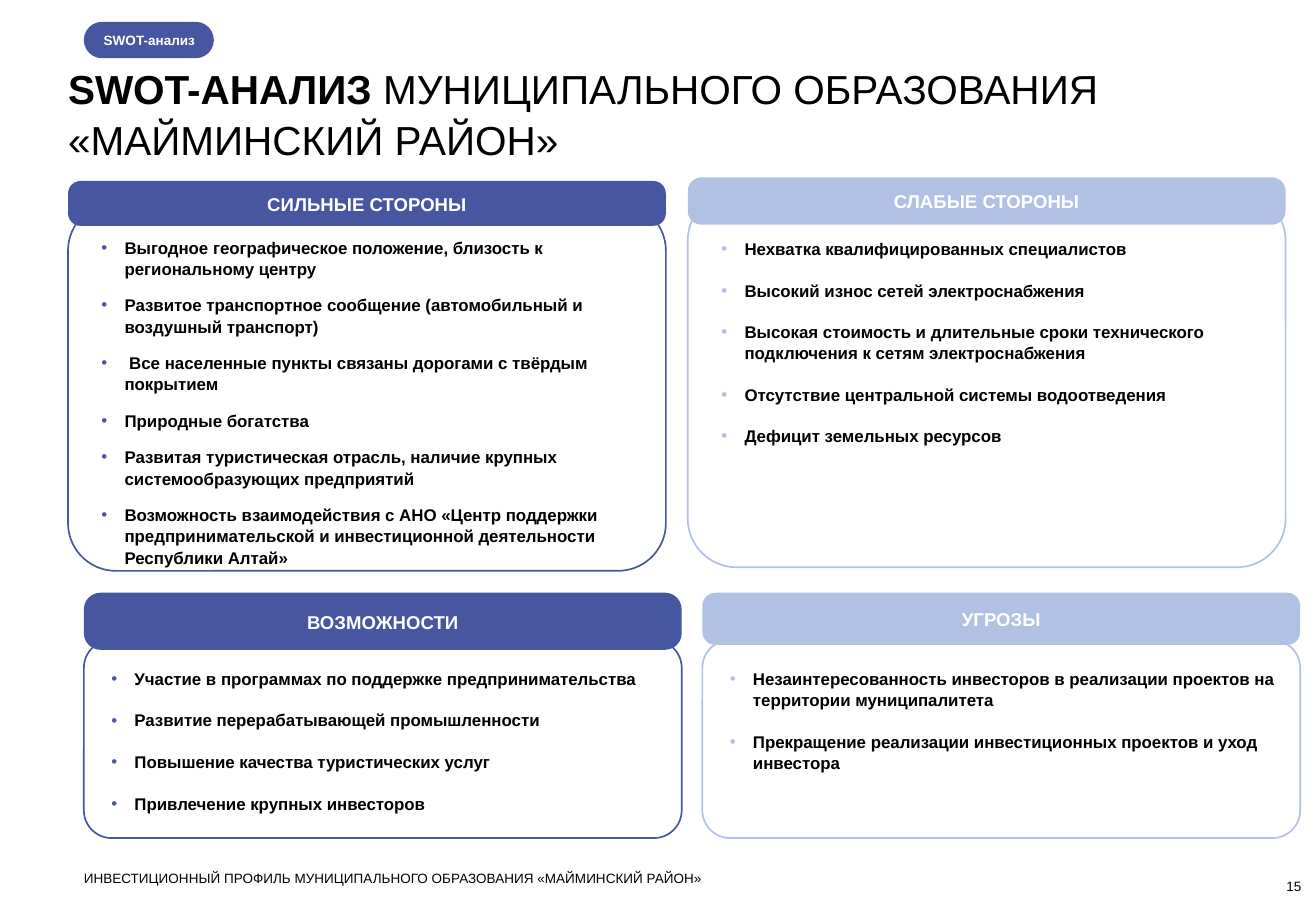
from lxml import etree
from pptx import Presentation
from pptx.dml.color import RGBColor
from pptx.enum.shapes import MSO_SHAPE
from pptx.enum.text import MSO_ANCHOR, MSO_AUTO_SIZE, PP_ALIGN
from pptx.oxml.ns import qn
from pptx.util import Pt

ROUNDED = MSO_SHAPE.ROUNDED_RECTANGLE
TOP, MIDDLE, BOTTOM = MSO_ANCHOR.TOP, MSO_ANCHOR.MIDDLE, MSO_ANCHOR.BOTTOM
LEFT, CENTER, RIGHT = PP_ALIGN.LEFT, PP_ALIGN.CENTER, PP_ALIGN.RIGHT
NO_AUTOFIT = MSO_AUTO_SIZE.NONE

EMU_PER_PX = 9144  # 100 px to the inch
COLORS = {"strong": "4756A0", "light": "B1C1E4", "text": "000000", "white": "FFFFFF"}
FONT = "Arial"
LINE_SPACING = 1.05
INDENT = 19
CARD_WIDTH = 492

# Each quadrant: heading, colour, left, heading (top, height, radius),
# card (top, height, radius), top inset, right inset, gap in points, items
QUADRANTS = [
    ("СИЛЬНЫЕ СТОРОНЫ", "strong", 56, (149, 37, 0.28), (167, 303, 0.13), 16, 16, 9, [
        "Выгодное географическое положение, близость к региональному центру",
        "Развитое транспортное сообщение (автомобильный и воздушный транспорт)",
        " Все населенные пункты связаны дорогами с твёрдым покрытием",
        "Природные богатства",
        "Развитая туристическая отрасль, наличие крупных системообразующих предприятий",
        "Возможность взаимодействия с АНО «Центр поддержки предпринимательской "
        "и инвестиционной деятельности Республики Алтай»",
    ]),
    ("СЛАБЫЕ СТОРОНЫ", "light", 566, (146, 39, 0.29), (158, 309, 0.13), 26, 10, 12, [
        "Нехватка квалифицированных специалистов",
        "Высокий износ сетей электроснабжения",
        "Высокая стоимость и длительные сроки технического подключения "
        "к сетям электроснабжения",
        "Отсутствие центральной системы водоотведения",
        "Дефицит земельных ресурсов",
    ]),
    ("ВОЗМОЖНОСТИ", "strong", 69, (488, 47, 0.29), (527, 163, 0.14), 16, 16, 12, [
        "Участие в программах по поддержке предпринимательства",
        "Развитие перерабатывающей промышленности",
        "Повышение качества туристических услуг",
        "Привлечение крупных инвесторов",
    ]),
    ("УГРОЗЫ", "light", 578, (488, 43, 0.25), (527, 163, 0.14), 16, 10, 12, [
        "Незаинтересованность инвесторов в реализации проектов на "
        "территории муниципалитета",
        "Прекращение реализации инвестиционных проектов и уход инвестора",
    ]),
]


def px(*lengths):
    return [length * EMU_PER_PX for length in lengths]


def rgb(name):
    return RGBColor.from_string(COLORS[name])


def write(paragraph, text, size=10, bold=False, color="text", align=LEFT):
    paragraph.alignment = align
    paragraph.line_spacing = LINE_SPACING
    run = paragraph.add_run()
    run.text = text
    run.font.name = FONT
    run.font.size = Pt(size)
    run.font.bold = bold
    run.font.color.rgb = rgb(color)


def prepare_frame(frame, insets=(0, 0, 0, 0), anchor=TOP):
    frame.word_wrap = True
    frame.auto_size = NO_AUTOFIT
    frame.vertical_anchor = anchor
    (frame.margin_left, frame.margin_top,
     frame.margin_right, frame.margin_bottom) = px(*insets)
    return frame


def add_rounded(slide, box, radius, fill=None, line=None):
    rounded = slide.shapes.add_shape(ROUNDED, *px(*box))
    rounded.shadow.inherit = False
    rounded.adjustments[0] = radius
    if fill:
        rounded.fill.solid()
        rounded.fill.fore_color.rgb = rgb(fill)
    else:
        rounded.fill.background()
    if line:
        rounded.line.color.rgb = rgb(line)
        rounded.line.width = Pt(1)
    else:
        rounded.line.fill.background()
    return rounded


def add_bullet(paragraph, color):
    properties = paragraph._p.get_or_add_pPr()
    indent, = px(INDENT)
    properties.set("marL", str(indent))
    properties.set("indent", str(-indent))
    bullet_color = etree.SubElement(properties, qn("a:buClr"))
    etree.SubElement(bullet_color, qn("a:srgbClr"), val=COLORS[color])
    etree.SubElement(properties, qn("a:buFont"), typeface=FONT)
    etree.SubElement(properties, qn("a:buChar"), char="•")


def add_quadrant(slide, heading, color, left, heading_band, card_band,
                 top_inset, right_inset, gap, items):
    """Outlined card with a bulleted list, under a filled heading bar."""
    top, height, radius = card_band
    card = add_rounded(slide, (left, top, CARD_WIDTH, height), radius, line=color)
    frame = prepare_frame(card.text_frame, (16, top_inset, right_inset, 5))
    for number, item in enumerate(items):
        paragraph = frame.add_paragraph() if number else frame.paragraphs[0]
        add_bullet(paragraph, color)
        if number:
            paragraph.space_before = Pt(gap)
        write(paragraph, item, bold=True)

    top, height, radius = heading_band
    bar = add_rounded(slide, (left, top, CARD_WIDTH, height), radius, fill=color)
    frame = prepare_frame(bar.text_frame, (10, 5, 10, 5), MIDDLE)
    write(frame.paragraphs[0], heading, size=11, bold=True, color="white", align=CENTER)


def add_title(slide, box):
    title = slide.shapes.title
    title.left, title.top, title.width, title.height = px(*box)
    paragraph = prepare_frame(title.text_frame).paragraphs[0]
    write(paragraph, "SWOT-АНАЛИЗ ", size=24, bold=True)
    write(paragraph, "МУНИЦИПАЛЬНОГО ОБРАЗОВАНИЯ «МАЙМИНСКИЙ РАЙОН»", size=24)


def add_section_tag(slide, box):
    tag = add_rounded(slide, box, 0.5, fill="strong")
    frame = prepare_frame(tag.text_frame, (12, 0, 0, 0), MIDDLE)
    write(frame.paragraphs[0], "SWOT-анализ", size=8, bold=True, color="white")


def add_footer_text(slide, box, text, anchor=TOP, align=LEFT):
    footer = slide.shapes.add_textbox(*px(*box))
    frame = prepare_frame(footer.text_frame, anchor=anchor)
    write(frame.paragraphs[0], text, size=8, align=align)


def main():
    presentation = Presentation()
    presentation.slide_width, presentation.slide_height = px(1083, 750)
    slide = presentation.slides.add_slide(presentation.slide_layouts.get_by_name("Title Only"))
    add_section_tag(slide, (69, 18, 107, 30))
    add_title(slide, (56, 51, 1018, 81))
    for quadrant in QUADRANTS:
        add_quadrant(slide, *quadrant)
    add_footer_text(slide, (69, 716, 800, 13),
                    "ИНВЕСТИЦИОННЫЙ ПРОФИЛЬ МУНИЦИПАЛЬНОГО ОБРАЗОВАНИЯ «МАЙМИНСКИЙ РАЙОН»")
    add_footer_text(slide, (991, 723, 80, 13), "15", anchor=BOTTOM, align=RIGHT)


    presentation.save("out.pptx")


if __name__ == "__main__":
    main()
